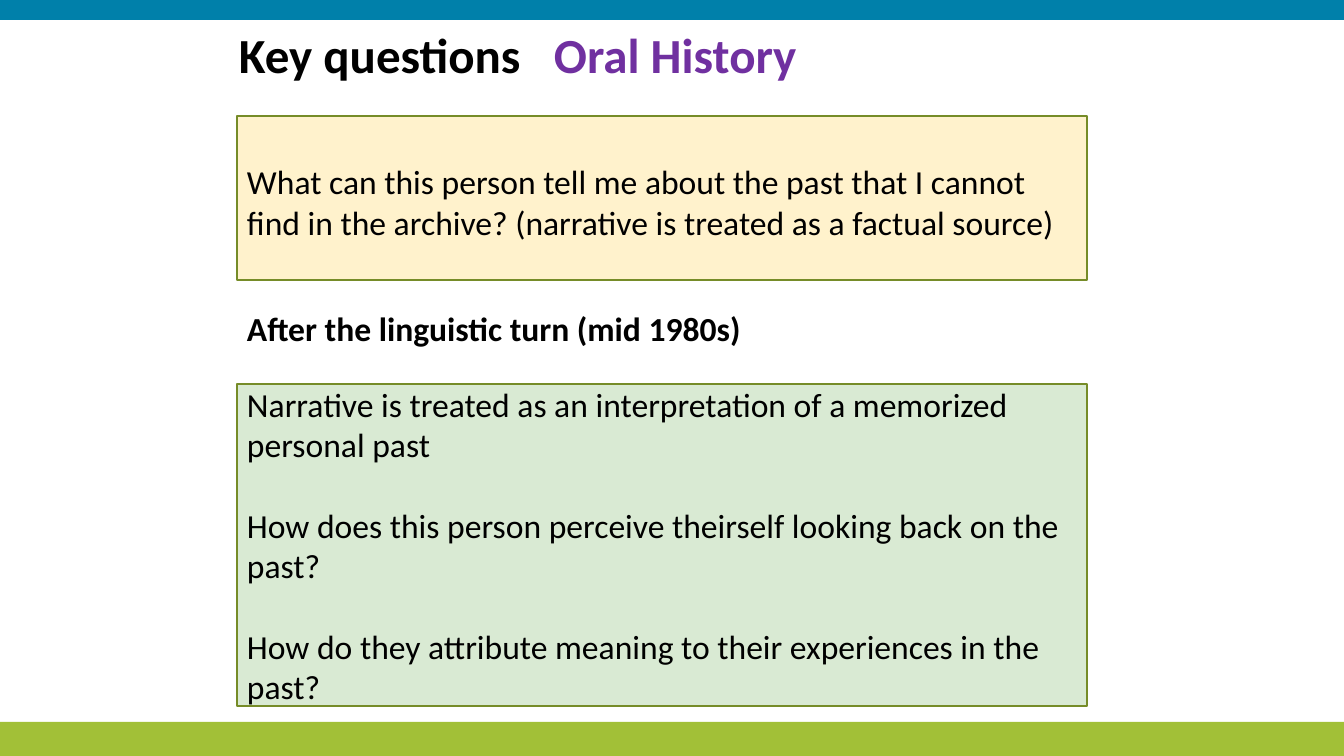
from dataclasses import dataclass

from lxml import etree
from pptx import Presentation
from pptx import util as u
from pptx.dml import color
from pptx.enum import shapes, text
from pptx.oxml import ns

SCALE = 914400 / 100.8


def px(length):
    return u.Emu(round(length * SCALE))


@dataclass(frozen=True)
class Theme:
    font: str = "Calibri"
    title_size: float = 35
    body_size: float = 24
    ink: str = "000000"
    accent: str = "7030A0"
    outline: str = "768C28"
    cream: str = "FFF2CC"
    mint: str = "D9EAD3"
    blue: str = "0080AA"
    green: str = "A2C037"


class SlideBuilder:
    def __init__(self, page, theme):
        self.page = page
        self.theme = theme

    def rectangle(self, area, fill, outline=None):
        box = self.page.shapes.add_shape(
            shapes.MSO_SHAPE.RECTANGLE, *map(px, area))
        box.shadow.inherit = False
        box.fill.solid()
        box.fill.fore_color.rgb = color.RGBColor.from_string(fill)
        if outline:
            box.line.color.rgb = color.RGBColor.from_string(outline)
            box.line.width = u.Pt(1)
        else:
            box.line.fill.background()
        return box

    def fill_text(self, box, paragraphs, size, bold=False, gap=0, top=5,
                  anchor=text.MSO_ANCHOR.TOP, spacing=None, tab=None):
        frame = box.text_frame
        settings = {"word_wrap": True, "vertical_anchor": anchor,
                    "margin_left": px(10), "margin_right": px(10),
                    "margin_top": px(top), "margin_bottom": px(5)}
        for name, value in settings.items():
            setattr(frame, name, value)
        for index, spans in enumerate(paragraphs):
            para = frame.add_paragraph() if index else frame.paragraphs[0]
            layout = {"alignment": text.PP_ALIGN.LEFT,
                      "line_spacing": spacing,
                      "space_before": u.Pt(gap if index else 0)}
            for name, value in layout.items():
                setattr(para, name, value)
            if tab:
                stops = etree.SubElement(
                    para._p.get_or_add_pPr(), ns.qn("a:tabLst"))
                etree.SubElement(stops, ns.qn("a:tab"),
                                 pos=str(px(tab)), algn="l")
            for words, ink in spans:
                span = para.add_run()
                span.text = words
                style = {"name": self.theme.font, "size": u.Pt(size),
                         "bold": bold}
                for name, value in style.items():
                    setattr(span.font, name, value)
                span.font.color.rgb = color.RGBColor.from_string(ink)

    def panel(self, area, fill, sentences, **options):
        box = self.rectangle(area, fill, self.theme.outline)
        self.fill_text(box, [[(words, self.theme.ink)] for words in sentences],
                       self.theme.body_size, anchor=text.MSO_ANCHOR.MIDDLE,
                       **options)

    def heading(self, area, spans, size, **options):
        box = self.page.shapes.add_textbox(*map(px, area))
        self.fill_text(box, [spans], size, bold=True, **options)


def main():
    theme = Theme()
    deck = Presentation()
    deck.slide_width, deck.slide_height = px(1344), px(756)
    page = deck.slides.add_slide(deck.slide_layouts[6])
    slide = SlideBuilder(page, theme)

    slide.rectangle((0, 722, 1344, 34), theme.green)
    slide.rectangle((0, 0, 1344, 20), theme.blue)
    slide.heading((229, 26, 869, 119),
                  [("Key questions\t", theme.ink),
                   ("Oral History", theme.accent)],
                  theme.title_size, spacing=0.9, tab=315)
    slide.panel((237, 116, 850, 164), theme.cream,
                ["What can this person tell me about the past that I cannot "
                 "find in the archive? (narrative is treated as a factual "
                 "source)"], top=12)
    slide.panel((237, 384, 850, 322), theme.mint,
                ["Narrative is treated as an interpretation of a memorized "
                 "personal past",
                 "How does this person perceive theirself looking back on "
                 "the past?",
                 "How do they attribute meaning to their experiences in the "
                 "past?"], gap=29)
    slide.heading((237, 303, 570, 82),
                  [("After the linguistic turn (mid 1980s)", theme.ink)],
                  theme.body_size)
    deck.save("out.pptx")


if __name__ == "__main__":
    main()
